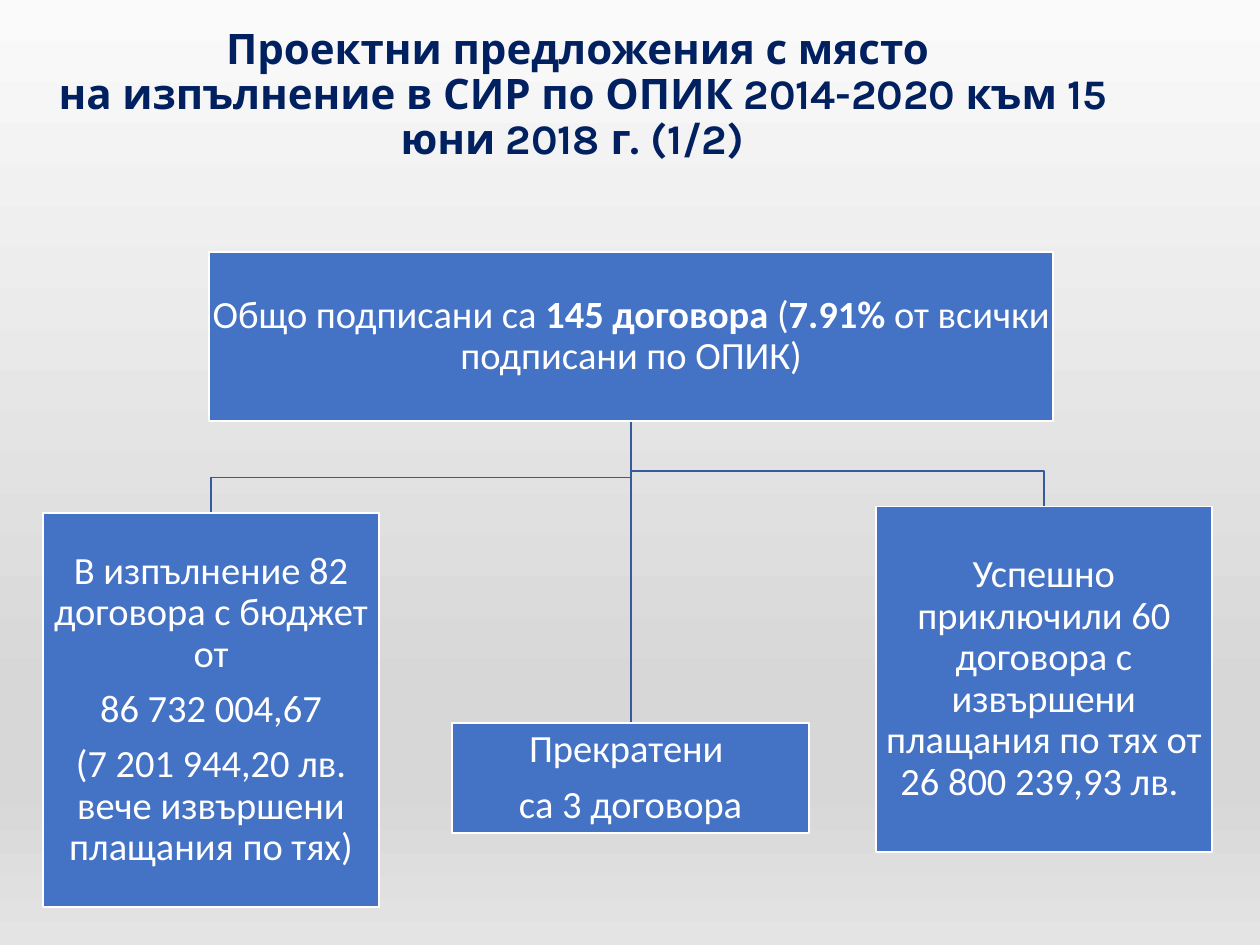
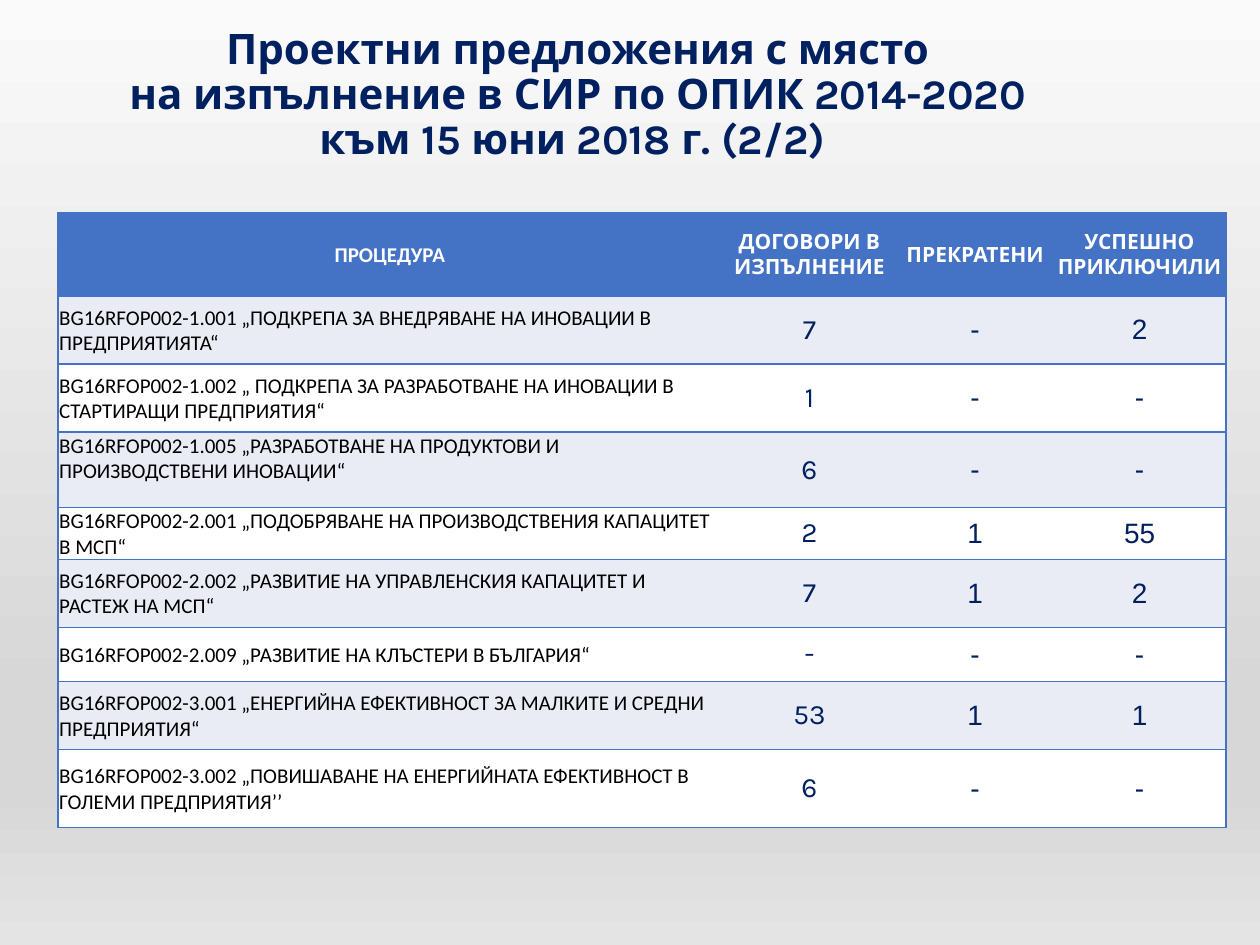
from dataclasses import dataclass

from lxml.etree import SubElement
from pptx import Presentation
from pptx.dml.color import RGBColor
from pptx.enum.shapes import MSO_CONNECTOR, MSO_SHAPE
from pptx.enum.text import MSO_ANCHOR, PP_ALIGN
from pptx.oxml.ns import qn
from pptx.util import Inches, Pt


@dataclass(frozen=True)
class Theme:
    navy: str = "002060"
    blue: str = "4472C4"
    connector: str = "365B9D"
    white: str = "FFFFFF"
    black: str = "000000"
    band: str = "E9EBF5"
    background: tuple = ((0, "FAFAFA"), (74, "D7D7D7"), (83, "D7D7D7"), (100, "E4E4E4"))
    heading_font: str = "Karla"
    body_font: str = "Calibri"
    number_font: str = "Arial"
    title_size: int = 24
    box_size: int = 22
    number_size: int = 16
    label_size: int = 12


theme = Theme()
presentation = Presentation()
presentation.slide_width, presentation.slide_height = Inches(10), Inches(7.5)
UNIT = presentation.slide_width // 100  # the grid has 100 columns and 75 rows
LINE = Pt(1)


def grid(*cells):
    """Turn counts of grid columns or rows into lengths."""
    return [round(cell * UNIT) for cell in cells]


def write(frame, holder, paragraphs, style, paragraph_format, holder_format):
    """Fill a frame; each paragraph is a list of runs, every second one bold."""
    for name, value in holder_format.items():
        setattr(holder, name, value)
    font_name, size, color, bold = style
    for number, pieces in enumerate(paragraphs):
        paragraph = frame.add_paragraph() if number else frame.paragraphs[0]
        for name, value in paragraph_format.items():
            setattr(paragraph, name, value)
        for index, piece in enumerate(pieces):
            for line_number, line in enumerate(piece.split("\n")):
                if line_number:
                    paragraph.add_line_break()
                run = paragraph.add_run()
                run.text = line
                font_format = {"name": font_name, "size": Pt(size), "bold": bold or index % 2 == 1}
                for name, value in font_format.items():
                    setattr(run.font, name, value)
                run.font.color.rgb = RGBColor.from_string(color)


# Both slides: background and title
titles = [
    "Проектни предложения с място\n на изпълнение в СИР по ОПИК 2014-2020 към 15 юни 2018 г. (1/2) ",
    "Проектни предложения с място\n на изпълнение в СИР по ОПИК 2014-2020 \nкъм 15 юни 2018 г. (2/2) ",
]
title_style = (theme.heading_font, theme.title_size, theme.navy, True)
tight_center = {"alignment": PP_ALIGN.CENTER, "line_spacing": 0.9}
slides = []
for title in titles:
    slide = presentation.slides.add_slide(presentation.slide_layouts[6])
    fill = slide.background.fill
    fill.gradient()
    fill.gradient_angle = 270
    stops = slide.background._cSld.find(".//" + qn("a:gsLst"))
    for stop in list(stops):
        stops.remove(stop)
    for position, color in theme.background:
        stop = SubElement(stops, qn("a:gs"), pos=str(position * 1000))
        SubElement(stop, qn("a:srgbClr"), val=color)
    title_box = slide.shapes.add_textbox(*grid(1.2, 2, 89.3, 11.2))
    write(title_box.text_frame, title_box.text_frame, [[title]], title_style, tight_center,
          {"word_wrap": True, "vertical_anchor": MSO_ANCHOR.MIDDLE})
    slides.append(slide)
contracts_slide, procedures_slide = slides

# Contracts tree: the total on top, three outcomes below
total_box = (16.6, 20, 67, 13.4)
running_box = (3.4, 40.7, 26.7, 31.3)
terminated_box = (35.9, 57.4, 28.3, 8.7)
completed_box = (69.5, 40.2, 26.7, 27.4)
contract_boxes = [
    (total_box, [["Общо подписани са ", "145 договора", " (", "7.91% ",
                  "от всички подписани по ОПИК)"]]),
    (running_box, [["В изпълнение 82 договора с бюджет от"], ["86 732 004,67"],
                   ["(7 201 944,20 лв. вече извършени плащания по тях)"]]),
    (terminated_box, [["Прекратени "], ["са 3 договора"]]),
    (completed_box, [["Успешно приключили 60 договора с извършени плащания по тях "
                      "от 26 800 239,93 лв. "]]),
]
trunk = total_box[0] + total_box[2] / 2
trunk_top = total_box[1] + total_box[3]
elbow_rise = 2.8

branches = []
for left, top, width, height in (completed_box, running_box):
    middle, elbow = left + width / 2, top - elbow_rise
    builder = contracts_slide.shapes.build_freeform(*grid(trunk, trunk_top))
    corners = [grid(trunk, elbow), grid(middle, elbow), grid(middle, top)]
    builder.add_line_segments(corners, close=False)
    branch = builder.convert_to_shape()
    branch.fill.background()
    branch.shadow.inherit = False
    branches.append(branch)
stem = contracts_slide.shapes.add_connector(
    MSO_CONNECTOR.STRAIGHT, *grid(trunk, trunk_top, trunk, terminated_box[1]))
SubElement(stem._element.spPr, qn("a:effectLst"))
for branch in branches + [stem]:
    branch.line.width = LINE
    branch.line.color.rgb = RGBColor.from_string(theme.connector)

box_style = (theme.body_font, theme.box_size, theme.white, False)
box_margin = Inches(0.02)
box_format = {"word_wrap": True, "vertical_anchor": MSO_ANCHOR.MIDDLE,
              "margin_left": box_margin, "margin_right": box_margin,
              "margin_top": box_margin, "margin_bottom": box_margin}
for place, paragraphs in contract_boxes:
    box = contracts_slide.shapes.add_shape(MSO_SHAPE.RECTANGLE, *grid(*place))
    box.shadow.inherit = False
    box.fill.solid()
    box.fill.fore_color.rgb = RGBColor.from_string(theme.blue)
    box.line.color.rgb = RGBColor.from_string(theme.white)
    box.line.width = LINE
    write(box.text_frame, box.text_frame, paragraphs, box_style,
          tight_center | {"space_after": Pt(0.35 * theme.box_size)}, box_format)

# Procedures table
procedures = [
    ("ПРОЦЕДУРА", "ДОГОВОРИ В ИЗПЪЛНЕНИЕ", "ПРЕКРАТЕНИ", "УСПЕШНО ПРИКЛЮЧИЛИ"),
    ("BG16RFOP002-1.001 „ПОДКРЕПА ЗА ВНЕДРЯВАНЕ НА ИНОВАЦИИ В ПРЕДПРИЯТИЯТА“", "7", "-", "2"),
    ("BG16RFOP002-1.002 „ ПОДКРЕПА ЗА РАЗРАБОТВАНЕ НА ИНОВАЦИИ В СТАРТИРАЩИ ПРЕДПРИЯТИЯ“",
     "1", "-", "-"),
    ("BG16RFOP002-1.005 „РАЗРАБОТВАНЕ НА ПРОДУКТОВИ И ПРОИЗВОДСТВЕНИ ИНОВАЦИИ“", "6", "-", "-"),
    ("BG16RFOP002-2.001 „ПОДОБРЯВАНЕ НА ПРОИЗВОДСТВЕНИЯ КАПАЦИТЕТ В МСП“", "2", "1", "55"),
    ("BG16RFOP002-2.002 „РАЗВИТИЕ НА УПРАВЛЕНСКИЯ КАПАЦИТЕТ И РАСТЕЖ НА МСП“", "7", "1", "2"),
    ("BG16RFOP002-2.009 „РАЗВИТИЕ НА КЛЪСТЕРИ В БЪЛГАРИЯ“", "-", "-", "-"),
    ("BG16RFOP002-3.001 „ЕНЕРГИЙНА ЕФЕКТИВНОСТ ЗА МАЛКИТЕ И СРЕДНИ ПРЕДПРИЯТИЯ“", "53", "1", "1"),
    ("BG16RFOP002-3.002 „ПОВИШАВАНЕ НА ЕНЕРГИЙНАТА ЕФЕКТИВНОСТ В ГОЛЕМИ ПРЕДПРИЯТИЯ’’",
     "6", "-", "-"),
]
column_widths = grid(52.7, 13.9, 12.4, 13.7)
row_heights = grid(6.6, 5.4, 5.4, 6, 4.1, 5.4, 4.3, 5.4, 6.2)
last_column = len(column_widths) - 1
raised_row = 3
table = procedures_slide.shapes.add_table(
    len(row_heights), len(column_widths), *grid(4.6, 16.9),
    sum(column_widths), sum(row_heights)).table
for column, width in zip(table.columns, column_widths):
    column.width = width
for row, height in zip(table.rows, row_heights):
    row.height = height

for row_number, values in enumerate(procedures):
    for column_number, value in enumerate(values):
        cell = table.cell(row_number, column_number)
        header, label = row_number == 0, column_number == 0
        font_name = (theme.body_font if label else
                     theme.heading_font if header or column_number == 1 else theme.number_font)
        size = theme.label_size if header or label else theme.number_size
        color = theme.white if header else theme.black if label else theme.navy
        margin = Inches(0.01) if header or label else 0
        bottom = Inches(0.19) if label and row_number == raised_row else 0
        alignment = PP_ALIGN.LEFT if label and not header else PP_ALIGN.CENTER
        write(cell.text_frame, cell, [[value]], (font_name, size, color, header),
              {"alignment": alignment},
              {"vertical_anchor": MSO_ANCHOR.MIDDLE, "margin_left": margin,
               "margin_right": margin, "margin_top": margin, "margin_bottom": bottom})
        edges = {"lnL": label, "lnR": column_number == last_column, "lnT": True, "lnB": True}
        for edge, visible in edges.items():
            border = SubElement(cell._tc.get_or_add_tcPr(), qn("a:" + edge), w=str(LINE))
            if visible:
                SubElement(SubElement(border, qn("a:solidFill")), qn("a:srgbClr"), val=theme.blue)
            else:
                SubElement(border, qn("a:noFill"))
        cell.fill.solid()
        cell.fill.fore_color.rgb = RGBColor.from_string(
            theme.blue if header else theme.band if row_number % 2 else theme.white)

presentation.save("out.pptx")
